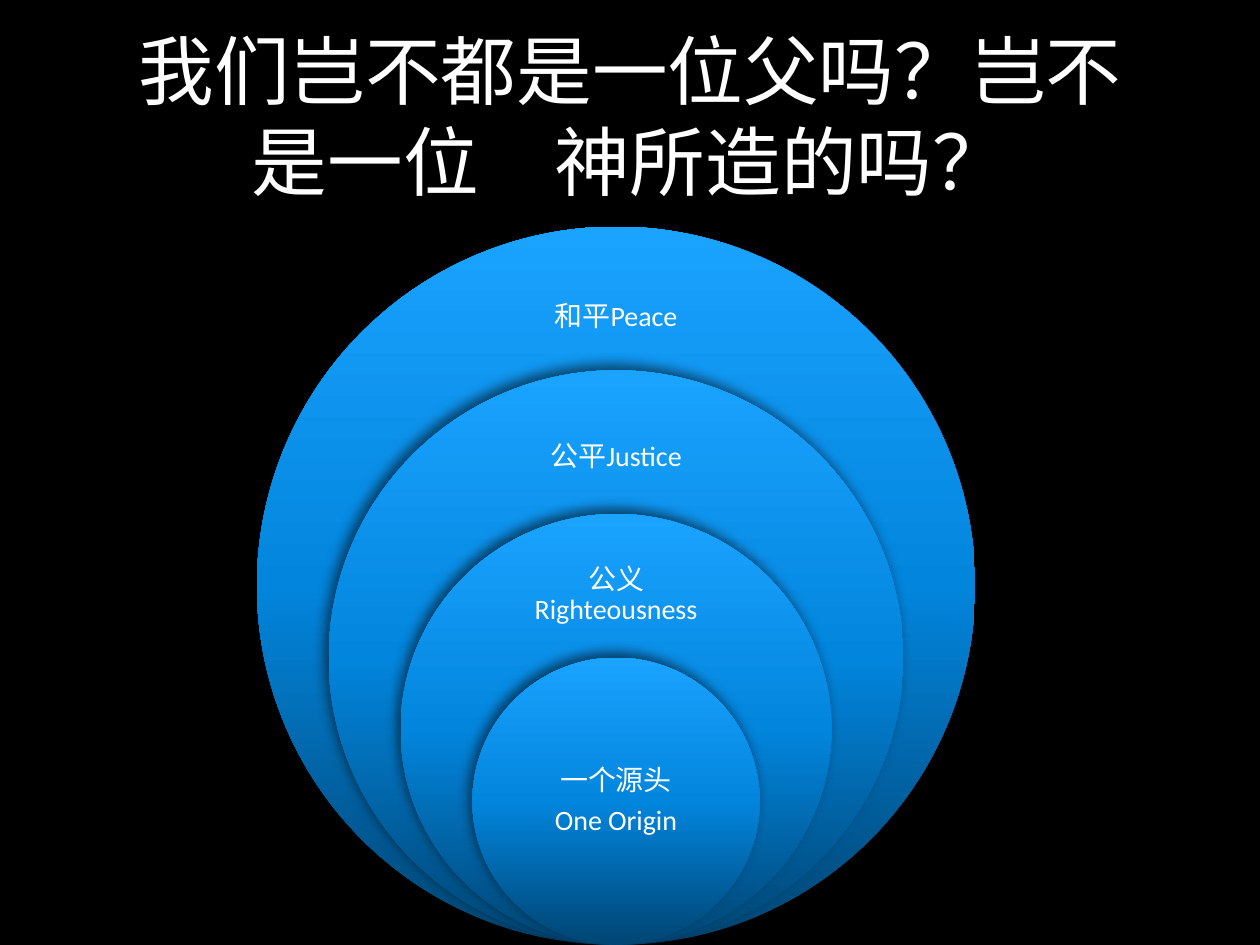
from dataclasses import dataclass

from lxml import etree
from pptx import Presentation
from pptx.dml.color import RGBColor
from pptx.enum.shapes import MSO_SHAPE
from pptx.enum.text import MSO_ANCHOR, PP_ALIGN
from pptx.oxml.ns import qn
from pptx.util import Cm, Pt

OVAL = MSO_SHAPE.OVAL
MIDDLE = MSO_ANCHOR.MIDDLE
CENTER = PP_ALIGN.CENTER
FONT = "Calibri"
WHITE = "FFFFFF"
BLACK = "000000"
STOPS = ((0, "014573"), (50, "0285DD"), (100, "1AA3FF"))
OUTER = 14.48
CENTER_X = 12.42
BOTTOM = 19.05
LABEL_W = 4.06


@dataclass
class Ring:
    text: str
    label_top: float
    label_height: float


RINGS = [
    Ring("和平Peace", 5.31, 2.16),
    Ring("公平Justice", 8.18, 2.08),
    Ring("公义Righteousness", 11.02, 1.96),
    Ring("一个源头\nOne Origin", 14.71, 2.9),
]


def rgb(value: str) -> RGBColor:
    """Turn a hex string into a colour."""
    return RGBColor.from_string(value)


def add_color(parent, value: str, alpha: int = 100) -> None:
    """Append a colour element, with its opacity in percent."""
    color = etree.SubElement(parent, qn("a:srgbClr"), val=value)
    if alpha < 100:
        etree.SubElement(color, qn("a:alpha"), val=str(alpha * 1000))


def add_text(shapes, left: float, top: float, width: float, height: float,
             text: str, size: float, inset: float | None = None):
    """Add a centred white text box and return its text frame."""
    tf = shapes.add_textbox(Cm(left), Cm(top), Cm(width), Cm(height)).text_frame
    tf.word_wrap = True
    tf.vertical_anchor = MIDDLE
    if inset is not None:
        tf.margin_left = tf.margin_right = Cm(inset)
        tf.margin_top = tf.margin_bottom = Cm(inset)
    tf.text = text
    for p in tf.paragraphs:
        p.alignment = CENTER
        for r in p.runs:
            r.font.name = FONT
            r.font.size = Pt(size)
            r.font.color.rgb = rgb(WHITE)
    return tf


def add_circle(shapes, diameter: float) -> None:
    """Add a gradient circle with a soft shadow, resting on the slide bottom."""
    sp = shapes.add_shape(OVAL, Cm(CENTER_X - diameter / 2), Cm(BOTTOM - diameter),
                          Cm(diameter), Cm(diameter))
    sp.line.fill.background()
    sp.fill.gradient()
    sp.fill.gradient_angle = 90
    stops = sp.element.spPr.find(".//" + qn("a:gsLst"))
    for old in list(stops):
        stops.remove(old)
    for pos, color in STOPS:
        add_color(etree.SubElement(stops, qn("a:gs"), pos=str(pos * 1000)), color)
    sp.shadow.inherit = False
    effects = sp.element.spPr.find(qn("a:effectLst"))
    shadow = etree.SubElement(effects, qn("a:outerShdw"), blurRad=str(Pt(7)),
                              dist=str(Pt(4)), dir=str(235 * 60000), rotWithShape="0")
    add_color(shadow, BLACK, 55)


def add_ring(shapes, ring: Ring, diameter: float) -> None:
    """Add one circle with its label."""
    add_circle(shapes, diameter)
    tf = add_text(shapes, CENTER_X - LABEL_W / 2, ring.label_top, LABEL_W,
                  ring.label_height, ring.text, 16, 0.3)
    for p in tf.paragraphs:
        p.line_spacing = 0.9
        p.space_after = Pt(5.6)


def main() -> None:
    """Build the slide and save it."""
    prs = Presentation()
    prs.slide_width, prs.slide_height = Cm(25.4), Cm(19.05)
    s = prs.slides.add_slide(prs.slide_layouts[6])
    s.background.fill.solid()
    s.background.fill.fore_color.rgb = rgb(BLACK)
    add_text(s.shapes, 1.9, 0.33, 21.6, 3.96,
             "我们岂不都是一位父吗？岂不是一位　神所造的吗？", 43.2)
    group = s.shapes.add_group_shape()
    for i, ring in enumerate(RINGS):
        add_ring(group.shapes, ring, OUTER * (1 - i / 5))
    prs.save("out.pptx")


if __name__ == "__main__":
    main()
